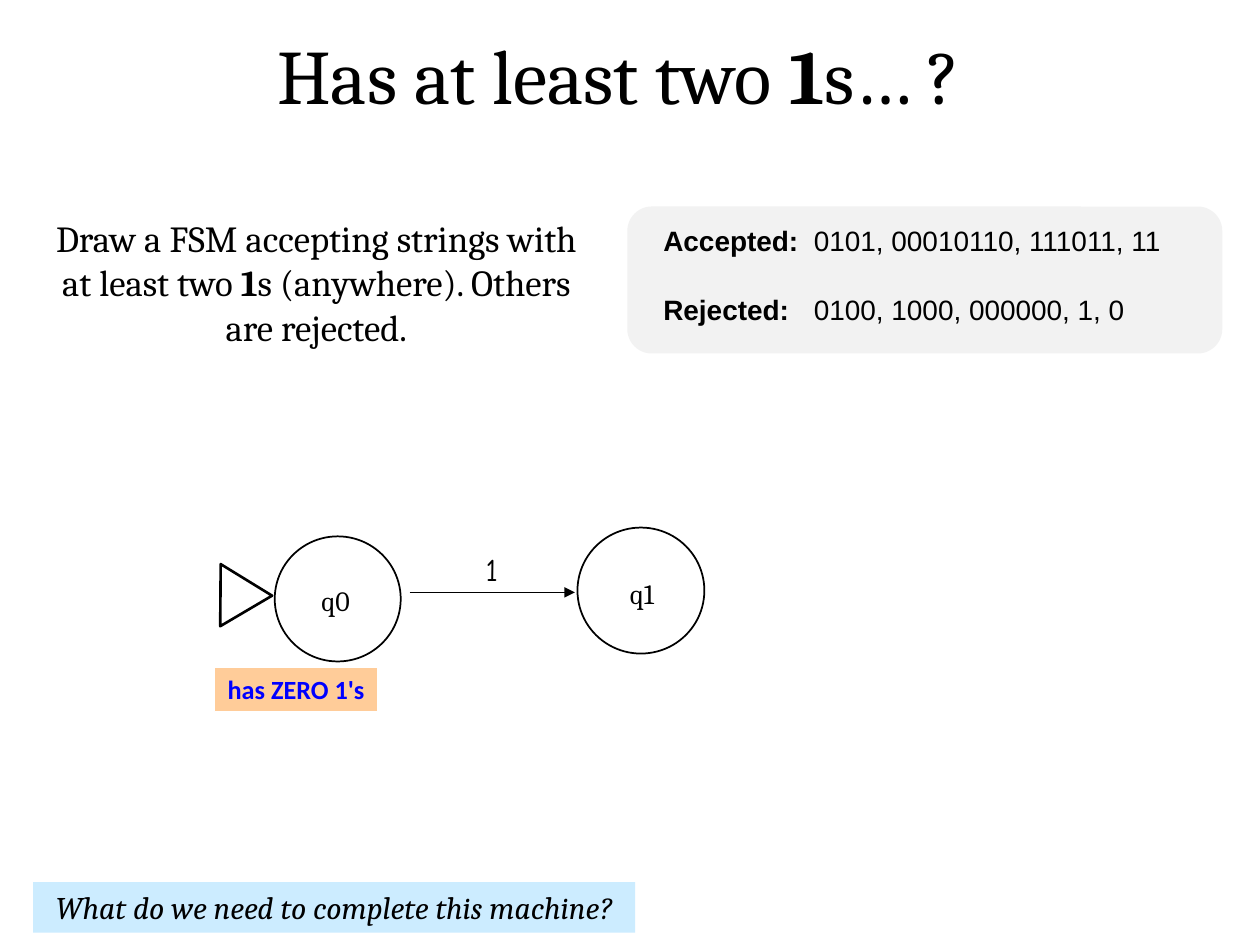
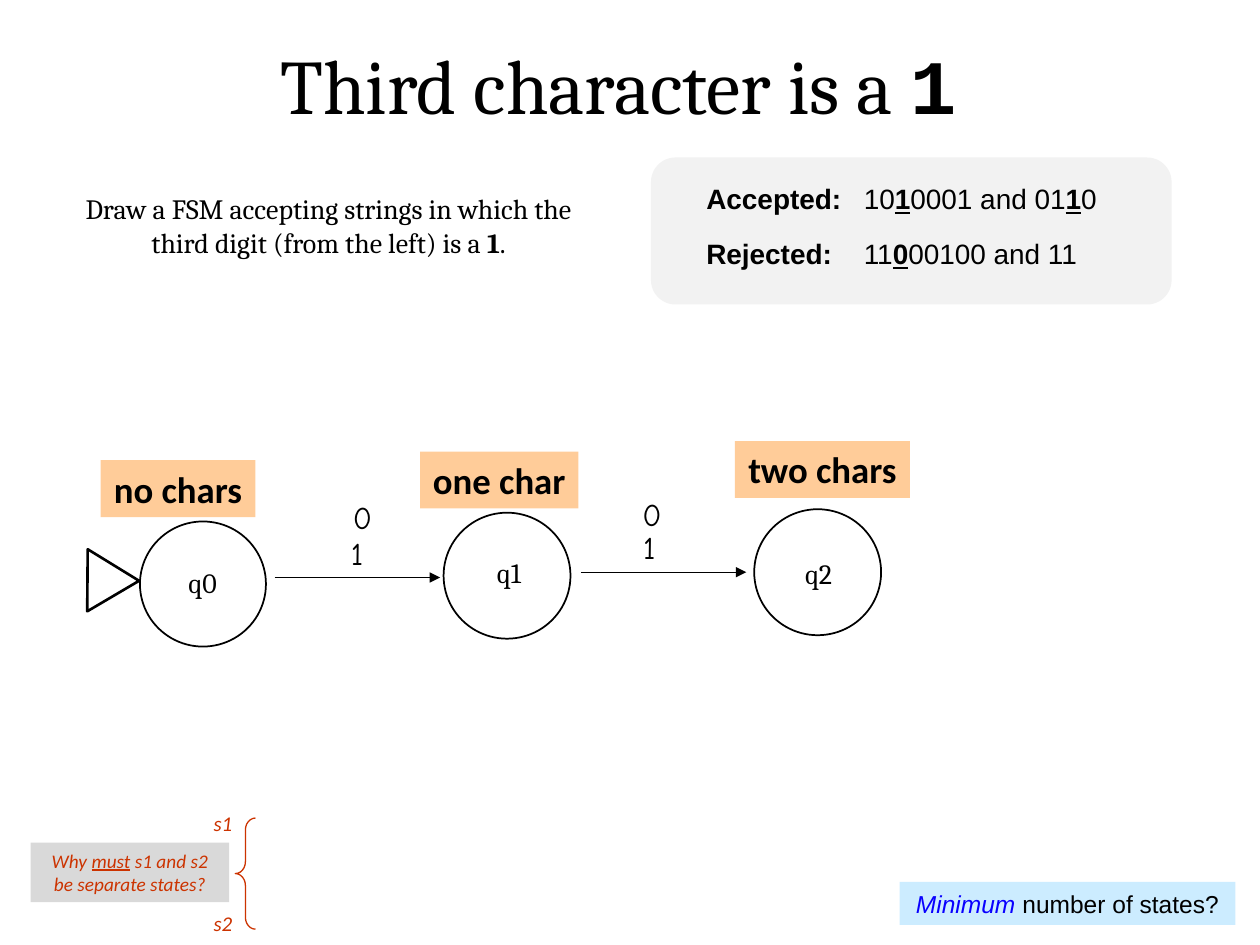
from dataclasses import dataclass

from lxml import etree
from pptx import Presentation
from pptx.dml.color import RGBColor
from pptx.enum import shapes, text
from pptx.oxml import ns
from pptx.util import Pt


@dataclass(frozen=True)
class Theme:
    black: str = "000000"
    white: str = "FFFFFF"
    panel: str = "F2F2F2"
    question: str = "CCECFF"
    tag: str = "FFCC99"
    hint: str = "D9D9D9"
    blue: str = "0000FF"
    violet: str = "0900FF"
    red: str = "CC3300"
    title: tuple = ("Cambria", 44, black)
    task: tuple = ("Cambria", 21, black)
    small_task: tuple = ("Cambria", 16, black)
    example: tuple = ("Arial", 16, black)
    state: tuple = ("Cambria", 16, black)
    symbol: tuple = ("Comic Neue", 18, black)
    question_text: tuple = ("Cambria", 18, black)
    small_question: tuple = ("Arial", 14, black)
    tag_text: tuple = ("Calibri", 21, black)
    small_tag: tuple = ("Calibri", 15, blue)
    hint_text: tuple = ("Calibri", 11, red)
    brace_text: tuple = ("Calibri", 12, red)


theme = Theme()
kinds = shapes.MSO_SHAPE
CENTER, LEFT = text.PP_ALIGN.CENTER, text.PP_ALIGN.LEFT
TOP, MIDDLE = text.MSO_ANCHOR.TOP, text.MSO_ANCHOR.MIDDLE


def draw(page, kind, frame, fill=None, line=None, weight=1):
    shape = page.shapes.add_shape(kind, *map(Pt, frame))
    shape.shadow.inherit = False
    if fill:
        shape.fill.solid()
        shape.fill.fore_color.rgb = RGBColor.from_string(fill)
    else:
        shape.fill.background()
    if line:
        shape.line.color.rgb = RGBColor.from_string(line)
        shape.line.width = Pt(weight)
    else:
        shape.line.fill.background()
    return shape


def write(box, style, spans, align=CENTER, anchor=TOP, wrap=True, new_para=False):
    frame = box.text_frame
    frame.word_wrap = wrap
    frame.vertical_anchor = anchor
    para = frame.add_paragraph() if new_para else frame.paragraphs[0]
    para.alignment = align
    font, size, color = style
    for words, marks, *other in spans:
        span = para.add_run()
        span.text = words
        span.font.name = font
        span.font.size = Pt(size)
        span.font.bold = "b" in marks
        span.font.italic = "i" in marks
        span.font.underline = "u" in marks
        span.font.color.rgb = RGBColor.from_string(color)
        for name in other:
            if name in (theme.blue, theme.violet):
                span.font.color.rgb = RGBColor.from_string(name)
            else:
                span.font.name = name
    return para


machines = [
    dict(
        title=(12, [("Has at least two ", ""), ("1", "b"), ("s… ?", "")]),
        task=((19.5, 120, 322.5, 83.5), theme.task,
              [("Draw a FSM accepting strings with at least two ", ""), ("1", "b"),
               ("s (anywhere). Others are rejected.", "")]),
        panel=(358.5, 118, 340, 84),
        examples=(372, 131, 324, 61), tab=86, gap=28,
        accepted=[("0101, 00010110, 111011, 11", "")],
        rejected=[("0100, 1000, 000000, 1, 0", "")],
        start=(123, 325.5),
        states=[((157, 306.5, 72, 71.5), (175.5, 330)),
                ((330, 301.5, 72.5, 72), (350.5, 325.5))],
        arrows=[(234, 338.5)],
        symbols=[("1", 270.5, 310.5)],
        tags=[("has ZERO 1's", (122.5, 381.5, 93.5, 25))],
        tag_style=theme.small_tag, tag_line=theme.white,
        question=((19, 504, 344, 29), theme.question_text, TOP,
                  [("What do we need to complete this machine?", "i")]),
    ),
    dict(
        title=(18, [("Third character is a ", ""), ("1", "b", "Courier New")]),
        task=((26.5, 106, 322.5, 46), theme.small_task,
              [("Draw a FSM accepting strings in which the third digit (from the left) is a ", ""),
               ("1", "b"), (".", "")]),
        panel=(372, 90, 297.5, 84),
        examples=(396.5, 107, 255.5, 52), tab=90, gap=20,
        accepted=[("10", ""), ("1", "bu"), ("0001 and 01", ""), ("1", "bu"), ("0", "")],
        rejected=[("11", ""), ("0", "bu"), ("00100 and 11", "")],
        start=(47, 317),
        states=[((80, 298, 72, 71.5), (99.5, 319.5)),
                ((253.5, 293, 72.5, 72), (274.5, 314)),
                ((431, 291, 72.5, 72), (451.5, 314.5))],
        arrows=[(157, 330), (332, 327)],
        symbols=[("0", 194.5, 281), ("1", 193.5, 301.5),
                 ("0", 360, 279.5), ("1", 360.5, 298)],
        tags=[("no chars", (57.5, 263, 88.5, 32.5)),
              ("one char", (240, 258, 90.5, 32.5)),
              ("two chars", (420, 252, 100, 32.5))],
        tag_style=theme.tag_text, tag_line=None,
        question=((514, 504, 192, 24.5), theme.small_question, MIDDLE,
                  [("Minimum ", "i", theme.violet), ("number of states?", "")]),
    ),
]

deck = Presentation()
deck.slide_width, deck.slide_height = Pt(720), Pt(540)

for machine in machines:
    page = deck.slides.add_slide(deck.slide_layouts[6])
    draw(page, kinds.ROUNDED_RECTANGLE, machine["panel"], theme.panel)

    top, spans = machine["title"]
    box = page.shapes.add_textbox(*map(Pt, (37.5, top, 632, 60)))
    write(box, theme.title, spans)

    frame, style, spans = machine["task"]
    write(page.shapes.add_textbox(*map(Pt, frame)), style, spans)

    box = page.shapes.add_textbox(*map(Pt, machine["examples"]))
    for name in ("accepted", "rejected"):
        spans = [(f"{name.title()}:\t", "b"), *machine[name]]
        para = write(box, theme.example, spans, LEFT, new_para=name == "rejected")
        para.line_spacing = 0.6
        para.space_before = Pt(machine["gap"] if name == "rejected" else 0)
        tabs = etree.SubElement(para._p.get_or_add_pPr(), ns.qn("a:tabLst"))
        etree.SubElement(tabs, ns.qn("a:tab"), pos=str(Pt(machine["tab"])), algn="l")

    start = draw(page, kinds.ISOSCELES_TRIANGLE, (*machine["start"], 35.5, 29.5),
                 line=theme.black, weight=1.5)
    start.rotation = 90.5

    for left, top in machine["arrows"]:
        arrow = page.shapes.add_connector(
            shapes.MSO_CONNECTOR.STRAIGHT, *map(Pt, (left, top, left + 94.5, top)))
        arrow.line.color.rgb = RGBColor.from_string(theme.black)
        arrow.line.width = Pt(0.75)
        etree.SubElement(arrow.line._get_or_add_ln(), ns.qn("a:tailEnd"), type="triangle")
        etree.SubElement(arrow._element.spPr, ns.qn("a:effectLst"))

    for symbol, left, top in machine["symbols"]:
        box = page.shapes.add_textbox(*map(Pt, (left, top, 36, 29)))
        write(box, theme.symbol, [(symbol, "")], LEFT)

    for number, (circle, label) in enumerate(machine["states"]):
        draw(page, kinds.OVAL, circle, line=theme.black)
        box = page.shapes.add_textbox(*map(Pt, (*label, 32.5, 26.5)))
        write(box, theme.state, [(f"q{number}", "")], anchor=MIDDLE, wrap=False)

    for words, frame in machine["tags"]:
        tag = draw(page, kinds.RECTANGLE, frame, theme.tag, machine["tag_line"], 0.75)
        write(tag, machine["tag_style"], [(words, "b")], wrap=False)

    frame, style, anchor, spans = machine["question"]
    question = draw(page, kinds.RECTANGLE, frame, theme.question)
    write(question, style, spans, anchor=anchor, wrap=False)

hint = draw(page, kinds.RECTANGLE, (17.5, 481.5, 113.5, 34), theme.hint)
write(hint, theme.hint_text,
      [("Why ", "i"), ("must", "iu"), (" s1 and s2 be separate states?", "i")], anchor=MIDDLE)
brace = draw(page, kinds.LEFT_BRACE, (134.5, 467.5, 11.5, 63.5), line=theme.red, weight=0.75)
brace.adjustments[0] = 0.59
for words, top in (("s1", 459.5), ("s2", 517)):
    box = page.shapes.add_textbox(*map(Pt, (115, top, 25, 21.5)))
    write(box, theme.brace_text, [(words, "i")], LEFT, wrap=False)

deck.save("out.pptx")
